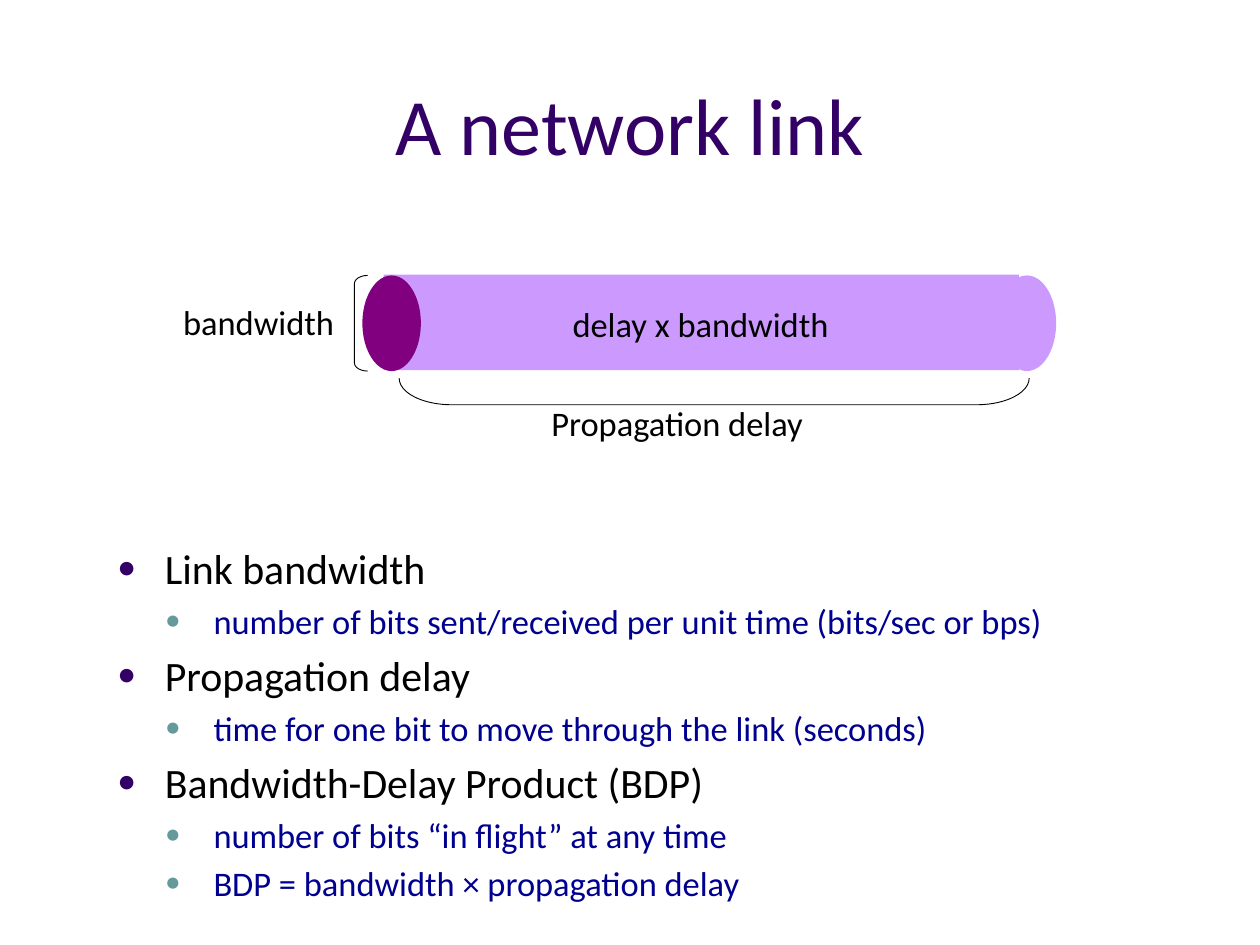
import lxml.etree
import pptx
import pptx.dml.color
import pptx.enum.shapes
import pptx.enum.text
import pptx.oxml.ns
import pptx.util

Inches = pptx.util.Inches
RGBColor = pptx.dml.color.RGBColor
MSO_SHAPE = pptx.enum.shapes.MSO_SHAPE
PP_ALIGN = pptx.enum.text.PP_ALIGN
MSO_ANCHOR = pptx.enum.text.MSO_ANCHOR

FONT = "Calibri"
INDIGO = RGBColor(0x33, 0x00, 0x66)
TEAL = RGBColor(0x66, 0x99, 0x99)
NAVY = RGBColor(0x00, 0x00, 0x90)
BLACK = RGBColor(0x00, 0x00, 0x00)
LILAC = RGBColor(0xCC, 0x99, 0xFF)
PURPLE = RGBColor(0x80, 0x00, 0x80)

# Per level: size, text colour, bullet colour, left margin, hanging indent
LEVELS = [
    (34, BLACK, INDIGO, 0.53, 0.53),
    (28, NAVY, TEAL, 1.08, 0.54),
]
BULLETS = [
    (0, "Link bandwidth"),
    (1, "number of bits sent/received per unit time (bits/sec or bps)"),
    (0, "Propagation delay"),
    (1, "time for one bit to move through the link (seconds)"),
    (0, "Bandwidth-Delay Product (BDP)"),
    (1, "number of bits “in flight” at any time"),
    (1, "BDP = bandwidth × propagation delay"),
]


def add_run(paragraph, text, size, color):
    run = paragraph.add_run()
    run.text = text
    run.font.name = FONT
    run.font.size = pptx.util.Pt(size)
    run.font.color.rgb = color


def set_margins(text_frame):
    text_frame.margin_left = text_frame.margin_right = Inches(0.14)
    text_frame.margin_top = text_frame.margin_bottom = Inches(0.07)


def add_title(slide, left, top, width, height):
    title = slide.shapes.title
    title.left, title.top = Inches(left), Inches(top)
    title.width, title.height = Inches(width), Inches(height)
    text_frame = title.text_frame
    set_margins(text_frame)
    text_frame.vertical_anchor = MSO_ANCHOR.BOTTOM
    paragraph = text_frame.paragraphs[0]
    paragraph.alignment = PP_ALIGN.CENTER
    add_run(paragraph, "A network link", 65, INDIGO)


def add_child(parent, tag, **attributes):
    return lxml.etree.SubElement(parent, pptx.oxml.ns.qn(tag), attributes)


def format_bullet(paragraph, color, margin, hanging):
    """Set the indents, the space before (20 %) and the bullet."""
    properties = paragraph._p.get_or_add_pPr()
    properties.set("marL", str(Inches(margin)))
    properties.set("indent", str(-Inches(hanging)))
    add_child(add_child(properties, "a:spcBef"), "a:spcPct", val="20000")
    add_child(add_child(properties, "a:buClr"), "a:srgbClr", val=str(color))
    add_child(properties, "a:buSzPct", val="70000")
    add_child(properties, "a:buFont", typeface=FONT)
    add_child(properties, "a:buChar", char="●")


def add_bullets(slide, left, top, width, height):
    box = slide.shapes.add_textbox(Inches(left), Inches(top), Inches(width), Inches(height))
    text_frame = box.text_frame
    text_frame.word_wrap = True
    set_margins(text_frame)
    for index, (level, text) in enumerate(BULLETS):
        paragraph = text_frame.add_paragraph() if index else text_frame.paragraphs[0]
        paragraph.level = level
        size, color, bullet_color, margin, hanging = LEVELS[level]
        format_bullet(paragraph, bullet_color, margin, hanging)
        add_run(paragraph, text, size, color)


def add_solid(slide, preset, color, left, top, width, height):
    shape = slide.shapes.add_shape(
        preset, Inches(left), Inches(top), Inches(width), Inches(height))
    shape.shadow.inherit = False
    shape.fill.solid()
    shape.fill.fore_color.rgb = color
    shape.line.fill.background()


def add_bracket(slide, left, top, width, height, curve, rotation=0):
    bracket = slide.shapes.add_shape(
        MSO_SHAPE.LEFT_BRACKET, Inches(left), Inches(top), Inches(width), Inches(height))
    bracket.shadow.inherit = False
    bracket.fill.background()
    bracket.line.color.rgb = BLACK
    bracket.line.width = pptx.util.Pt(0.75)
    bracket.adjustments[0] = curve
    bracket.rotation = rotation


def add_label(slide, text, left, top, width):
    label = slide.shapes.add_textbox(Inches(left), Inches(top), Inches(width), Inches(0.62))
    text_frame = label.text_frame
    text_frame.word_wrap = False
    text_frame.auto_size = pptx.enum.text.MSO_AUTO_SIZE.SHAPE_TO_FIT_TEXT
    set_margins(text_frame)
    paragraph = text_frame.paragraphs[0]
    paragraph.alignment = PP_ALIGN.RIGHT
    add_run(paragraph, text, 28, BLACK)


def add_pipe(slide, left, top, width, height):
    """Draw the link as a pipe with its two brackets and three labels."""
    cap = 0.66
    add_solid(slide, MSO_SHAPE.OVAL, LILAC, left + width - cap, top, cap, height)
    add_solid(slide, MSO_SHAPE.RECTANGLE, LILAC, left + 0.24, top - 0.01, width - cap, height)
    add_solid(slide, MSO_SHAPE.OVAL, PURPLE, left, top, cap, height)

    add_label(slide, "bandwidth", left - 2.22, top + 0.22, 2.04)
    add_bracket(slide, left - 0.09, top, 0.15, height, 0.61)

    # The delay bracket is turned a quarter, so its length is its height
    depth, length = 0.3, 7.11
    center_x, center_y = left + 3.97, top + height + 0.23
    add_bracket(slide, center_x - depth / 2, center_y - length / 2,
                depth, length, 1.98, rotation=270)
    add_label(slide, "Propagation delay", left + 1.88, top + 1.36, 3.23)
    add_label(slide, "delay x bandwidth", left + 2.14, top + 0.24, 3.26)


def main():
    presentation = pptx.Presentation()
    presentation.slide_width = Inches(14.22)
    presentation.slide_height = Inches(10.67)
    slide = presentation.slides.add_slide(presentation.slide_layouts[5])
    add_title(slide, 0.71, 0.19, 12.8, 1.82)
    add_bullets(slide, 1.19, 6.06, 13.03, 4.61)
    add_pipe(slide, 4.09, 3.11, 7.83, 1.08)
    presentation.save("out.pptx")


if __name__ == "__main__":
    main()
